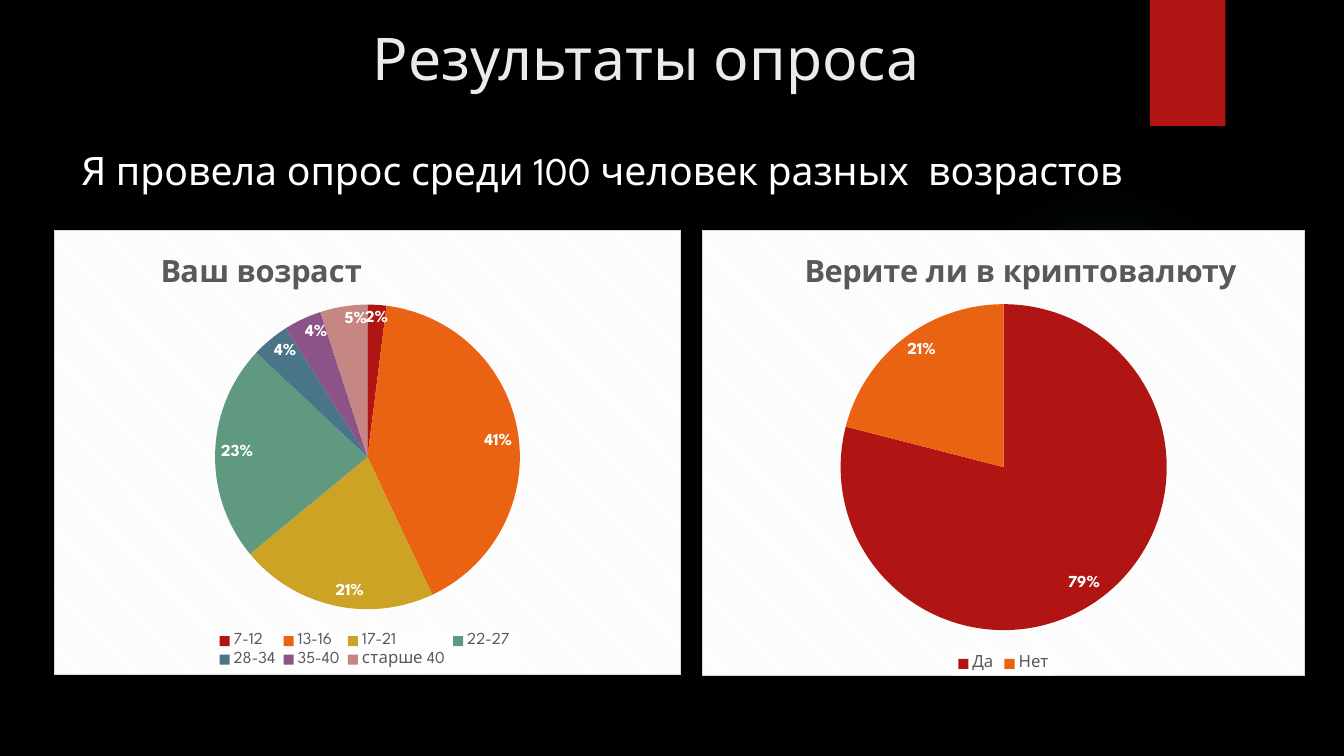
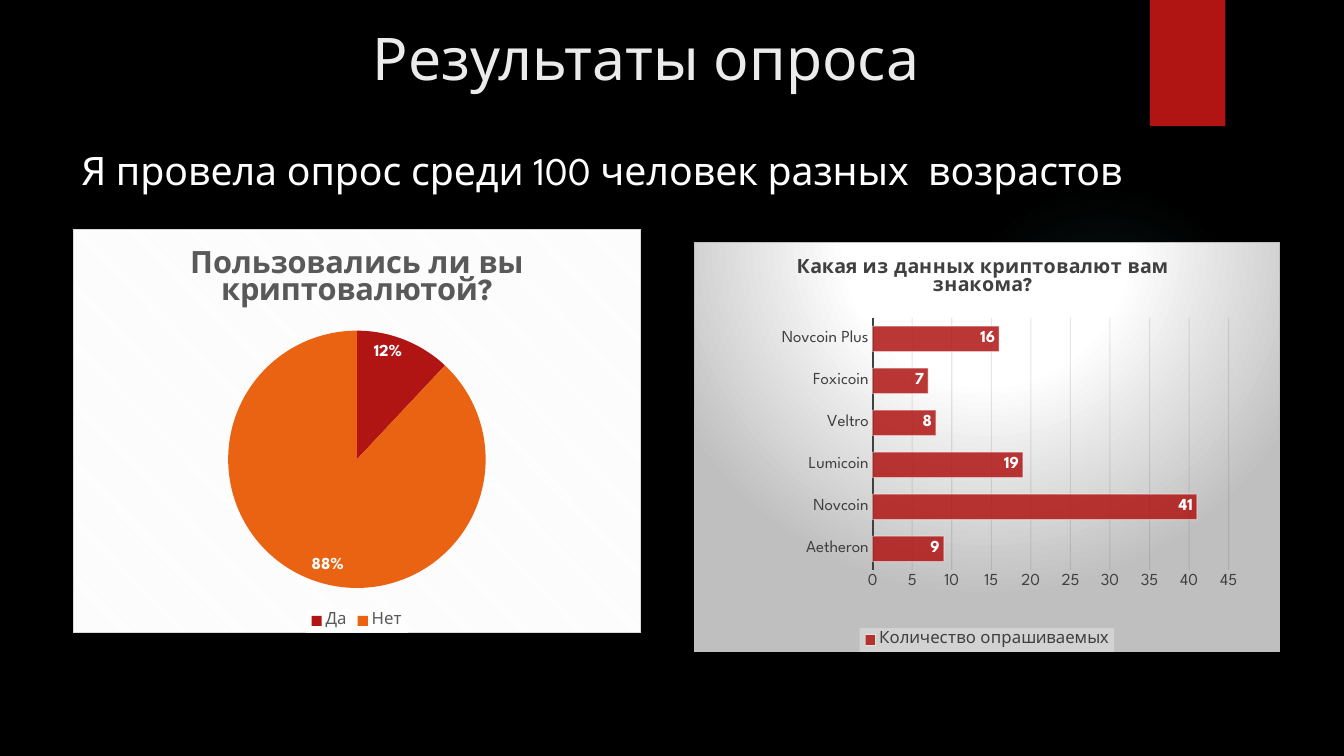
from dataclasses import dataclass
from typing import Optional

from lxml.etree import SubElement
from pptx import Presentation
from pptx.chart.data import CategoryChartData
from pptx.dml.color import RGBColor
from pptx.enum.chart import (XL_CHART_TYPE, XL_LABEL_POSITION,
                             XL_LEGEND_POSITION, XL_TICK_MARK)
from pptx.enum.shapes import MSO_SHAPE
from pptx.oxml import parse_xml
from pptx.oxml.ns import nsdecls, qn
from pptx.util import Cm, Pt

FONT = "League Spartan"
BLACK, WHITE, RED, TEAL = "000000", "FFFFFF", "B01513", "50B9C1"
TITLE_GREY, PIE_GREY, BAR_GREY = "EBEBEB", "595959", "404040"
SLICES = [RED, "EA6312", "CCA325", "5F9A80", "4A7588", "8B5388", "C68684"]

TITLE = "Результаты опроса"
SUBTITLE = "Я провела опрос среди 100 человек разных  возрастов"


@dataclass
class Frame:
    """Place on the slide, in centimetres."""
    left: float
    top: float
    width: float
    height: float

    def lengths(self) -> tuple:
        return Cm(self.left), Cm(self.top), Cm(self.width), Cm(self.height)


@dataclass
class PieSpec:
    title: str
    frame: Frame
    answers: dict
    pie_top: float
    diameter: float
    title_at: Optional[tuple] = None
    legend_at: Optional[tuple] = None


@dataclass
class BarSpec:
    title: str
    frame: Frame
    series: str
    answers: dict


YES, NO = "Да", "Нет"
AGE_PIE = PieSpec(
    "Ваш возраст", Frame(1.37, 5.79, 15.8, 11.23),
    {"7-12": 2, "13-16": 41, "17-21": 21, "22-27": 23,
     "28-34": 4, "35-40": 4, "старше 40": 5},
    1.87, 7.7, (0.16, 0.05), (0.25, 0.9, 0.49, 0.09))
BELIEF_PIE = PieSpec(
    "Верите ли в криптовалюту", Frame(17.7, 5.79, 15.19, 11.25),
    {YES: 79, NO: 21}, 1.87, 8.24, (0.16, 0.05))
USE_PIE = PieSpec(
    "Пользовались ли вы криптовалютой?", Frame(1.83, 5.77, 14.33, 10.19),
    {YES: 12, NO: 88}, 2.56, 6.5)
COIN_BARS = BarSpec(
    "Какая из данных криптовалют вам\nзнакома?",
    Frame(17.48, 6.1, 14.78, 10.34), "Количество опрашиваемых",
    {"Aetheron": 9, "Novcoin": 41, "Lumicoin": 19,
     "Veltro": 8, "Foxicoin": 7, "Novcoin Plus": 16})


# Colour and type helpers
def rgb(color: str) -> RGBColor:
    return RGBColor.from_string(color)


def paint(fill, color: str) -> None:
    fill.solid()
    fill.fore_color.rgb = rgb(color)


def style(font, size: float, color: str, bold: bool = False) -> None:
    font.name, font.size, font.bold = FONT, Pt(size), bold
    font.color.rgb = rgb(color)


def fade(element, query: str, percent: int) -> None:
    for color in element.xpath(query):
        SubElement(color, qn("a:alpha"), val=str(percent * 1000))


def radial(stops: list, focus: tuple):
    """Round gradient; stops hold position, colour and opacity in percent."""
    marks = "".join(
        f'<a:gs pos="{spot * 1000}"><a:srgbClr val="{color}">'
        f'<a:alpha val="{alpha * 1000}"/></a:srgbClr></a:gs>'
        for spot, color, alpha in stops)
    sides = " ".join(f'{side}="{share * 1000}"' for side, share in zip("ltrb", focus))
    return parse_xml(
        f'<a:gradFill {nsdecls("a")} rotWithShape="1"><a:gsLst>{marks}</a:gsLst>'
        f'<a:path path="circle"><a:fillToRect {sides}/></a:path></a:gradFill>')


def stripes():
    return parse_xml(
        f'<a:pattFill {nsdecls("a")} prst="dkDnDiag">'
        '<a:fgClr><a:srgbClr val="F2F2F2"/></a:fgClr>'
        f'<a:bgClr><a:srgbClr val="{WHITE}"/></a:bgClr></a:pattFill>')


# Shared slide parts
def add_text(slide, frame: Frame, text: str, size: float, color: str) -> None:
    box = slide.shapes.add_textbox(*frame.lengths())
    box.text_frame.word_wrap = True
    box.text_frame.text = text
    style(box.text_frame.paragraphs[0].font, size, color)


def add_ornament(slide, kind, frame: Frame, color: str):
    shape = slide.shapes.add_shape(kind, *frame.lengths())
    shape.shadow.inherit = False
    shape.line.fill.background()
    paint(shape.fill, color)
    return shape


def add_survey_slide(deck):
    slide = deck.slides.add_slide(deck.slide_layouts[6])
    glow = add_ornament(slide, MSO_SHAPE.OVAL, Frame(23.9, 4.65, 7.82, 7.82), TEAL)
    solid = glow.element.spPr.find(qn("a:solidFill"))
    solid.getparent().replace(solid, radial(
        [(0, TEAL, 7), (36, TEAL, 6), (69, TEAL, 0)], (50, 50, 50, 50)))
    add_ornament(slide, MSO_SHAPE.RECTANGLE, Frame(28.98, 0, 1.9, 3.18), RED)
    add_text(slide, Frame(9.14, 0.43, 16.23, 3.18), TITLE, 42, TITLE_GREY)
    add_text(slide, Frame(1.8, 3.56, 30.5, 1.45), SUBTITLE, 28, WHITE)
    return slide


# Shared chart parts
def set_layout(parent, index: int, shares: tuple, inner: bool = False) -> None:
    """Fix left, top and, if given, width and height as shares of the chart."""
    for old in parent.findall(qn("c:layout")):
        parent.remove(old)
    target = '<c:layoutTarget val="inner"/>' if inner else ""
    modes = '<c:xMode val="edge"/><c:yMode val="edge"/>'
    values = "".join(f'<c:{name} val="{share:.3f}"/>'
                     for name, share in zip("xywh", shares))
    parent.insert(index, parse_xml(
        f'<c:layout {nsdecls("c")}><c:manualLayout>{target}{modes}{values}'
        '</c:manualLayout></c:layout>'))


def add_survey_chart(slide, spec, kind, series: str, title_size: float,
                     grey: str, backdrop, border: str, legend_fill: tuple):
    data = CategoryChartData()
    data.categories = list(spec.answers)
    data.add_series(series, list(spec.answers.values()))
    chart = slide.shapes.add_chart(kind, *spec.frame.lengths(), data).chart
    style(chart.font, 10, WHITE)

    # Backdrop and border
    back = parse_xml(
        f'<c:spPr {nsdecls("c", "a")}><a:ln w="9525"><a:solidFill>'
        f'<a:srgbClr val="{border}"/></a:solidFill></a:ln></c:spPr>')
    back.insert(0, backdrop)
    chart.element.find(qn("c:chart")).addnext(back)

    # Title
    chart.has_title = True
    chart.chart_title.text_frame.text = spec.title
    for para in chart.chart_title.text_frame.paragraphs:
        for span in para.runs:
            style(span.font, title_size, grey, True)

    # Legend
    chart.has_legend = True
    chart.legend.position = XL_LEGEND_POSITION.BOTTOM
    chart.legend.include_in_layout = False
    style(chart.legend.font, 12, grey)
    color, alpha = legend_fill
    chart.element.xpath(".//c:legend/c:overlay")[0].addnext(parse_xml(
        f'<c:spPr {nsdecls("c", "a")}><a:solidFill><a:srgbClr val="{color}">'
        f'<a:alpha val="{alpha * 1000}"/></a:srgbClr></a:solidFill></c:spPr>'))

    # Data labels
    plot = chart.plots[0]
    plot.has_data_labels = True
    plot.data_labels.position = XL_LABEL_POSITION.INSIDE_END
    style(plot.data_labels.font, 12, WHITE, True)
    return chart


def add_pie(slide, spec: PieSpec) -> None:
    chart = add_survey_chart(slide, spec, XL_CHART_TYPE.PIE, spec.title, 22,
                             PIE_GREY, stripes(), "D9D9D9", (WHITE, 78))
    plot = chart.plots[0]
    plot.vary_by_categories = True
    labels = plot.data_labels
    labels.show_percentage, labels.show_value = True, False
    labels.number_format, labels.number_format_is_linked = "0%", False
    for index, color in enumerate(SLICES[:len(spec.answers)]):
        paint(plot.series[0].points[index].format.fill, color)

    width, height = spec.frame.width, spec.frame.height
    share = spec.diameter / width
    set_layout(chart.element.xpath(".//c:plotArea")[0], 0,
               ((1 - share) / 2, spec.pie_top / height,
                share, spec.diameter / height), inner=True)
    if spec.title_at:
        set_layout(chart.element.xpath(".//c:title")[0], 1, spec.title_at)
    if spec.legend_at:
        set_layout(chart.element.xpath(".//c:legend")[0], 1, spec.legend_at)


def add_bars(slide, spec: BarSpec) -> None:
    backdrop = radial([(0, WHITE, 100), (39, WHITE, 100), (100, "BFBFBF", 100)],
                      (50, -80, 50, 180))
    chart = add_survey_chart(slide, spec, XL_CHART_TYPE.BAR_CLUSTERED, spec.series,
                             14, BAR_GREY, backdrop, "BFBFBF", ("F2F2F2", 39))
    plot = chart.plots[0]
    plot.vary_by_categories = False
    plot.gap_width = 65
    plot.data_labels.show_value = True
    bars = plot.series[0].format
    paint(bars.fill, RED)
    paint(bars.line.fill, WHITE)
    bars.line.width = Pt(0.75)
    fade(chart.element, ".//c:ser/c:spPr/a:solidFill/a:srgbClr", 85)
    fade(chart.element, ".//c:ser/c:spPr/a:ln//a:srgbClr", 50)

    # Axes
    names, scale = chart.category_axis, chart.value_axis
    for axis in (names, scale):
        axis.major_tick_mark = axis.minor_tick_mark = XL_TICK_MARK.NONE
        style(axis.tick_labels.font, 12, BAR_GREY)
    paint(names.format.line.fill, BAR_GREY)
    names.format.line.width = Pt(1.5)
    scale.minimum_scale, scale.maximum_scale, scale.major_unit = 0, 45, 5
    scale.format.line.fill.background()
    scale.has_major_gridlines = True
    grid = scale.major_gridlines.format.line
    paint(grid.fill, "0D0D0D")
    grid.width = Pt(0.75)
    fade(chart.element, ".//c:majorGridlines//a:srgbClr", 10)

    set_layout(chart.element.xpath(".//c:plotArea")[0], 0,
               (0.305, 0.184, 0.608, 0.616), inner=True)
    set_layout(chart.element.xpath("./c:chart/c:title")[0], 1, (0.17, 0.03))


def main() -> None:
    deck = Presentation()
    deck.slide_width, deck.slide_height = Cm(33.87), Cm(19.05)
    paint(deck.slide_master.background.fill, BLACK)

    # Age and belief
    slide = add_survey_slide(deck)
    add_pie(slide, AGE_PIE)
    add_pie(slide, BELIEF_PIE)

    # Use and known coins
    slide = add_survey_slide(deck)
    add_pie(slide, USE_PIE)
    add_bars(slide, COIN_BARS)

    deck.save("out.pptx")


if __name__ == "__main__":
    main()
